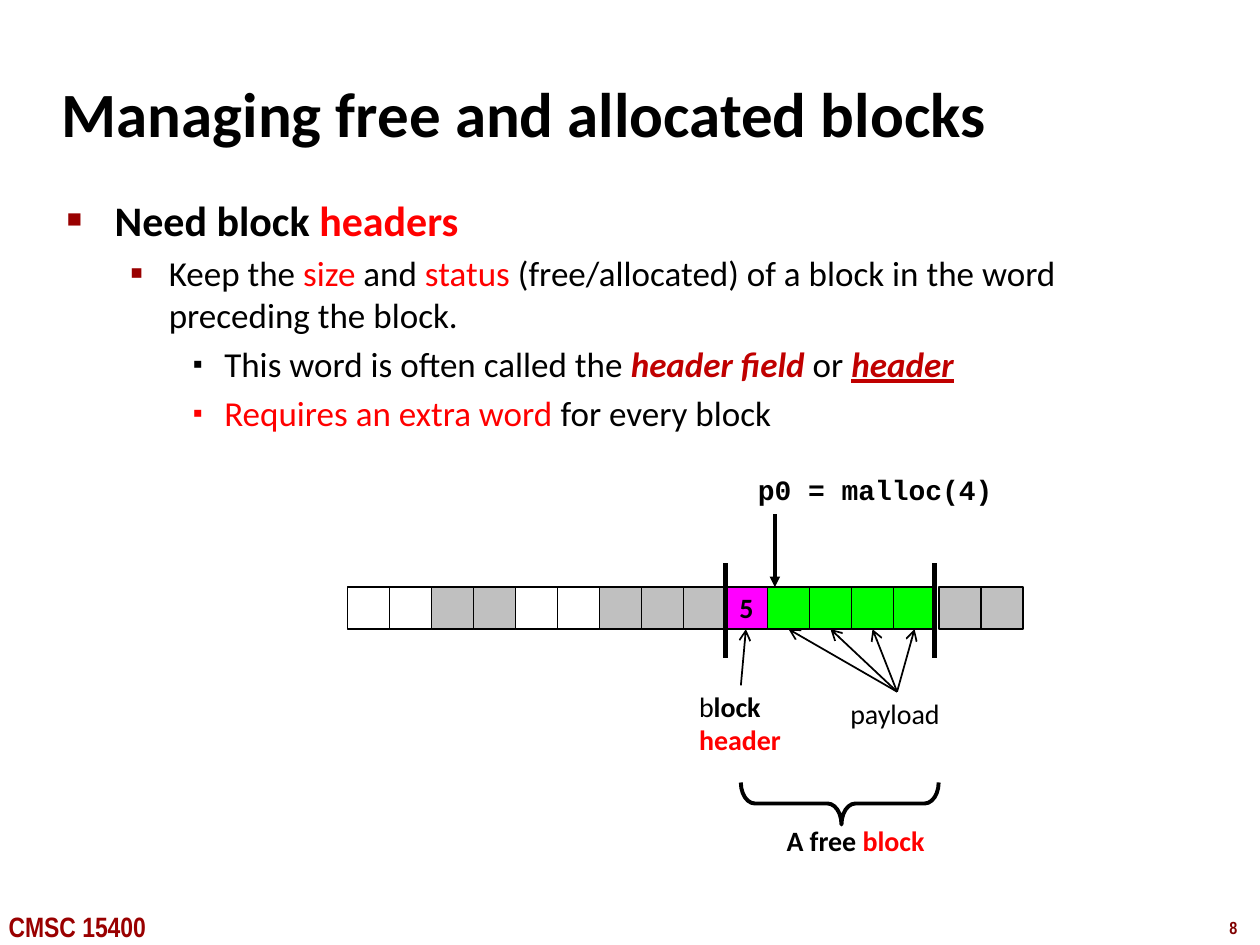
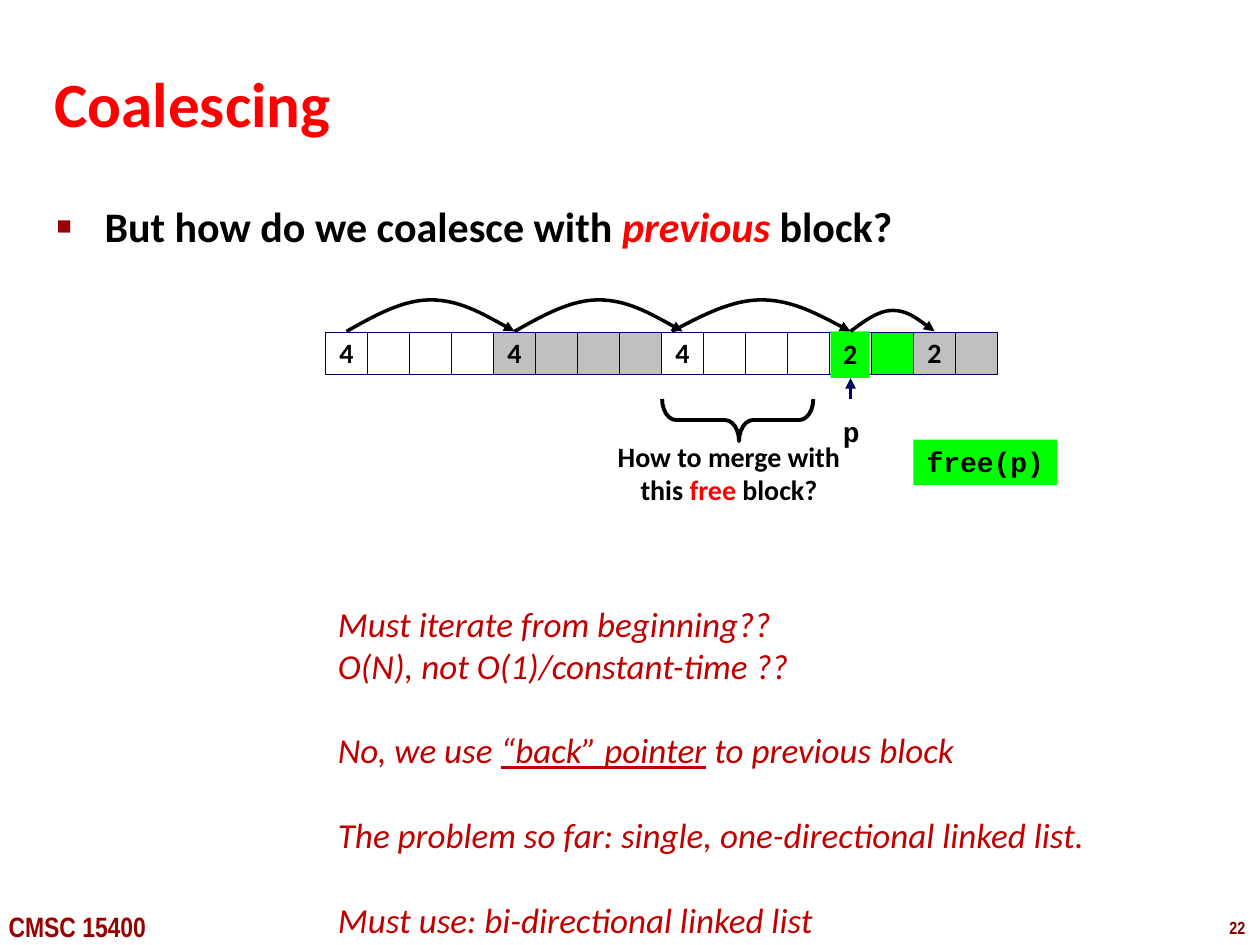
from itertools import product
from lxml.etree import SubElement
from pptx import Presentation
from pptx.dml.color import RGBColor
from pptx.enum.shapes import MSO_CONNECTOR as CONN, MSO_SHAPE as SHAPE
from pptx.enum.text import MSO_ANCHOR as ANCHOR, MSO_AUTO_SIZE as AUTO, PP_ALIGN as ALIGN
from pptx.oxml.ns import qn
from pptx.util import Inches, Pt

COLS, ROWS = 120, 90
CELL = 4
BLACK, RED, CRIMSON, MAROON, NAVY = "000000", "FF0000", "C00000", "990000", "000066"
GREEN = "00FF00"
FILLS = {"w": "FFFFFF", "g": "C0C0C0", "m": "FF00FF", "a": GREEN}
SANS, MONO, NARROW = "Calibri", "Courier New", "Arial Narrow"
BULLETS = [
    ("■", 60, MAROON, 0.38, -0.38),
    ("▪", 110, MAROON, 0.81, -0.31),
    ("▪", 80, None, 1.25, -0.25),
]


def rgb(color):
    return RGBColor.from_string(color)


class Deck:
    def __init__(self):
        self.prs = Presentation()
        self.prs.slide_width, self.prs.slide_height = Inches(10), Inches(7.5)
        self.col = self.prs.slide_width / COLS
        self.row = self.prs.slide_height / ROWS

    def x(self, cols):
        return round(cols * self.col)

    def y(self, rows):
        return round(rows * self.row)

    def box(self, left, top, width, height):
        return self.x(left), self.y(top), self.x(width), self.y(height)

    def slide(self, number):
        self.s = self.prs.slides.add_slide(self.prs.slide_layouts[1])
        self.text((115.92, 86.76, 4.08, 3.24), [[(number, "800000", "b")]], 10, NARROW, spacing=1)
        self.text((-0.36, 86.04, 17, 3.96), [[("CMSC 15400", MAROON, "b")]], 16, NARROW, spacing=1)

    def runs(self, p, runs, size, font=SANS):
        for text, color, style in runs:
            r = p.add_run()
            r.text = text
            r.font.size, r.font.name = Pt(size), font
            r.font.color.rgb = rgb(color)
            r.font.bold, r.font.italic = "b" in style, "i" in style
            r.font.underline = "u" in style

    def fill_frame(self, tf, paras, size, font, align=ALIGN.LEFT, spacing=0.98, gaps=()):
        tf.word_wrap = True
        for i, runs in enumerate(paras):
            p = tf.add_paragraph() if i else tf.paragraphs[0]
            p.alignment, p.line_spacing = align, spacing
            if i in gaps:
                p.space_before = Pt(size * 1.22)
            self.runs(p, runs, size, font)

    def text(self, area, paras, size=16, font=SANS, **style):
        sp = self.s.shapes.add_textbox(*self.box(*area))
        self.fill_frame(sp.text_frame, paras, size, font, **style)

    def placeholder(self, index, area):
        sp = self.s.placeholders[index]
        sp.left, sp.top, sp.width, sp.height = self.box(*area)
        sp.text_frame.auto_size = AUTO.NONE
        return sp.text_frame

    def title(self, area, text, color=BLACK):
        tf = self.placeholder(0, area)
        tf.vertical_anchor = ANCHOR.MIDDLE
        p = tf.paragraphs[0]
        p.alignment = ALIGN.LEFT
        self.runs(p, [(text, color, "b")], 36)

    def body(self, area, items, spacing=1.0):
        tf = self.placeholder(1, area)
        for i, (level, runs) in enumerate(items):
            p = tf.add_paragraph() if i else tf.paragraphs[0]
            size = 20 if level else 24
            p.level, p.line_spacing = level, spacing
            p.space_before = Pt(size * 0.2 if i else 0)
            self.bullet(p, *BULLETS[level])
            self.runs(p, runs, size)

    def bullet(self, p, char, percent, color, margin, indent):
        pPr = p._p.get_or_add_pPr()
        pPr.set("marL", str(Inches(margin)))
        pPr.set("indent", str(Inches(indent)))
        if color:
            SubElement(SubElement(pPr, qn("a:buClr")), qn("a:srgbClr"), val=color)
        SubElement(pPr, qn("a:buSzPct"), val=str(percent * 1000))
        SubElement(pPr, qn("a:buFont"), typeface="Arial")
        SubElement(pPr, qn("a:buChar"), char=char)

    def rect(self, area, fill, line=None, width=1, label=None, font=SANS):
        sp = self.s.shapes.add_shape(SHAPE.RECTANGLE, *self.box(*area))
        sp.shadow.inherit = False
        sp.fill.solid()
        sp.fill.fore_color.rgb = rgb(fill)
        if line:
            sp.line.color.rgb, sp.line.width = rgb(line), Pt(width)
        else:
            sp.line.fill.background()
        if label:
            tf = sp.text_frame
            tf.vertical_anchor = ANCHOR.MIDDLE
            self.fill_frame(tf, [[(label, BLACK, "b")]], 16, font, ALIGN.CENTER)

    def strip(self, left, top, kinds, labels, line, width):
        for i, kind in enumerate(kinds):
            area = left + i * CELL, top, CELL, CELL
            self.rect(area, FILLS[kind], line, width, labels.get(i))

    def stroke(self, sp, color, width, head=None):
        sp.line.color.rgb, sp.line.width = rgb(color), Pt(width)
        if head:
            SubElement(sp.line._get_or_add_ln(), qn("a:tailEnd"), type=head)

    def line(self, start, end, width=1, color=BLACK, head=None):
        sp = self.s.shapes.add_connector(
            CONN.STRAIGHT, self.x(start[0]), self.y(start[1]), self.x(end[0]), self.y(end[1]))
        self.stroke(sp, color, width, head)
        SubElement(sp._element.spPr, qn("a:effectLst"))

    def brace(self, left, top, width, depth=4):
        area = left + (width - depth) / 2, top + (depth - width) / 2, depth, width
        sp = self.s.shapes.add_shape(SHAPE.LEFT_BRACE, *self.box(*area))
        sp.rotation = 270
        sp.adjustments[0], sp.adjustments[1] = 0.333, 0.509
        sp.shadow.inherit = False
        sp.fill.background()
        self.stroke(sp, BLACK, 2.25)

    def arc(self, left, base, width, height):
        shares = [(1 / 6, 0.5), (1 / 3, 1), (0.5, 1), (2 / 3, 1), (5 / 6, 0.5), (1, 0)]
        points = [(self.x(left + u * width), self.y(base - v * height)) for u, v in shares]
        builder = self.s.shapes.build_freeform(self.x(left), self.y(base), scale=1.0)
        sp = builder.add_line_segments(points, close=False).convert_to_shape()
        outline = next(sp._element.iter(qn("a:path")))
        segments = outline.findall(qn("a:lnTo"))
        for i in range(0, len(segments), 3):
            curve = SubElement(outline, qn("a:cubicBezTo"))
            for segment in segments[i:i + 3]:
                curve.append(segment[0])
                outline.remove(segment)
        sp.shadow.inherit = False
        sp.fill.background()
        self.stroke(sp, BLACK, 2, "triangle")


def headers_slide(d):
    d.slide("8")
    d.title((4.68, 5.76, 99.6, 9.96), "Managing free and allocated blocks")
    d.body((5.16, 17.88, 103.68, 65.28), [
        (0, [("Need block ", BLACK, "b"), ("headers", RED, "b")]),
        (1, [("Keep the ", BLACK, ""), ("size", RED, ""), (" and ", BLACK, ""),
             ("status", RED, ""),
             (" (free/allocated) of a block in the word preceding the block.", BLACK, "")]),
        (2, [("This word is often called the ", BLACK, ""), ("header field ", CRIMSON, "bi"),
             ("or ", BLACK, ""), ("header", CRIMSON, "biu")]),
        (2, [("Requires an extra word ", RED, ""), ("for every block", BLACK, "")]),
    ])
    top = 55.92
    bottom = top + CELL
    d.text((71, 44.64, 25.2, 4.32), [[("p0 = malloc(4)", BLACK, "b")]], font=MONO, spacing=0.94)
    d.strip(33.1, top, "wwggwwgggmaaaa", {9: "5"}, BLACK, 1)
    d.strip(89.4, top, "gg", {}, BLACK, 1)
    for edge in (69.1, 89):
        d.line((edge, 53.64), (edge, 62.64), 3)
    d.line((73.8, 48.96), (73.8, top), 2, head="triangle")
    d.line((70.56, 65.28), (71.04, bottom), head="arrow")
    for i in range(4):
        d.line((85.44, 65.88), (75.1 + i * CELL, bottom), head="arrow")
    d.text((65.4, 65.28, 12, 7.5),
           [[("b", BLACK, ""), ("lock", BLACK, "b")], [("header", RED, "b")]])
    d.text((79.8, 65.88, 11.4, 4.5), [[("payload", BLACK, "")]])
    d.brace(70.56, 74.52, 18.84)
    d.text((73.56, 78, 15.84, 4.5), [[("A free ", BLACK, "b"), ("block", RED, "b")]],
           align=ALIGN.CENTER)


def coalescing_slide(d):
    d.slide("22")
    d.title((4, 6, 88.8, 7.56), "Coalescing", RED)
    d.body((4.2, 19.08, 109, 10.44), [
        (0, [("But how do we coalesce with ", BLACK, "b"), ("previous ", RED, "bi"),
             ("block?", BLACK, "b")]),
    ], 0.88)
    d.strip(31, 31.67, "wwwwggggwwwwwagg", {0: "4", 4: "4", 8: "4", 14: "2"}, NAVY, 0.25)
    d.rect((79.1, 31.56, 3.72, 4.44), GREEN, label="2")
    for left, width, height in [(33, 16, 3), (49, 16, 3), (64, 17, 3), (81, 8, 2)]:
        d.arc(left, 31.56, width, height)
    d.rect((87, 41.88, 13.68, 4.32), GREEN, label="free(p)", font=MONO)
    d.text((79.1, 39.12, 4, 4.32), [[("p", BLACK, "b")]], font=MONO, spacing=0.94)
    d.line((81, 38), (81, 36), 2, NAVY, "triangle")
    d.brace(63.06, 38, 14.4)
    d.text((57.48, 41.4, 23.88, 7.5), [
        [("How to merge with", BLACK, "b")],
        [("this ", BLACK, "b"), ("free", RED, "b"), (" block?", BLACK, "b")],
    ], align=ALIGN.CENTER)
    d.text((31, 56.76, 75.2, 33.24), [
        [("Must iterate from beginning??", CRIMSON, "i")],
        [("O(N), not O(1)/constant-time ??", CRIMSON, "i")],
        [("No, we use ", CRIMSON, "i"), ("“back” pointer", CRIMSON, "iu"),
         (" to previous block", CRIMSON, "i")],
        [("The problem so far: single, one-directional linked list.", CRIMSON, "i")],
        [("Must use: bi-directional linked list", CRIMSON, "i")],
    ], 20, spacing=1.0, gaps=(2, 3, 4))


def main():
    d = Deck()
    headers_slide(d)
    coalescing_slide(d)
    d.prs.save("out.pptx")


if __name__ == "__main__":
    main()
